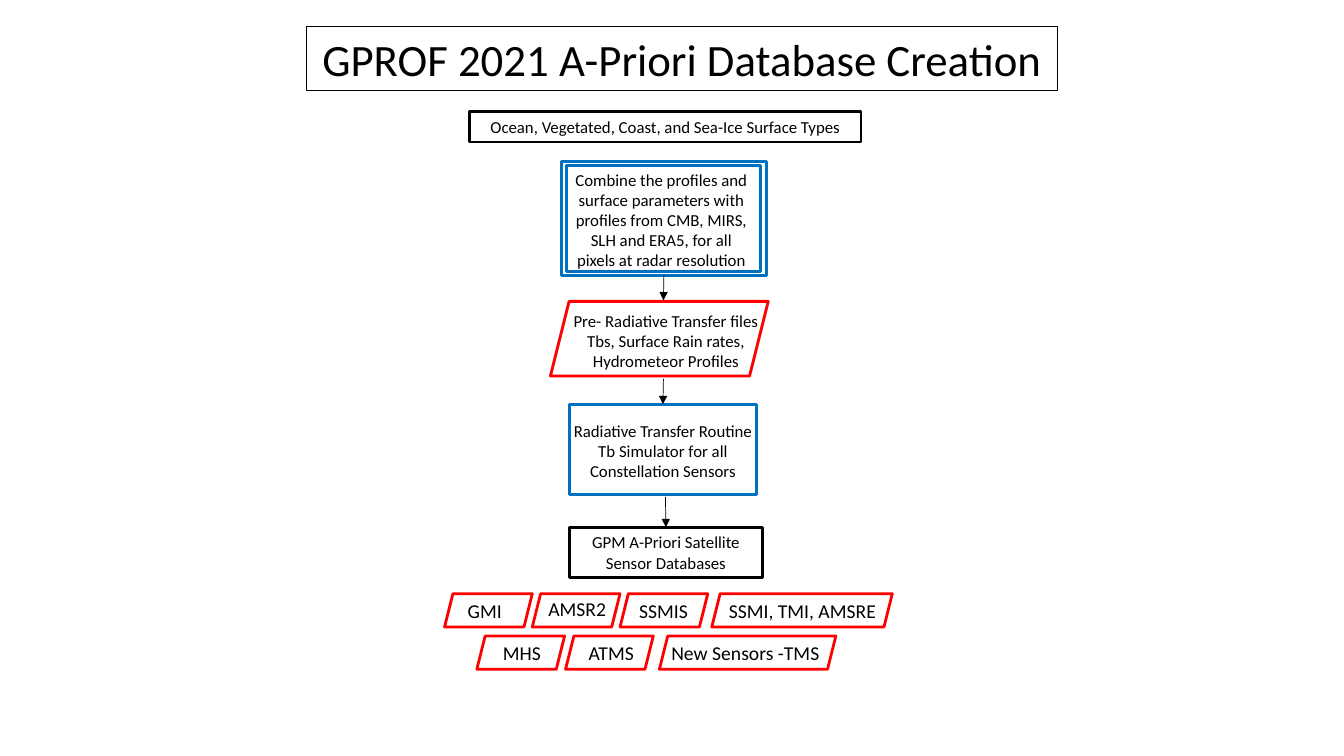
import dataclasses

import pptx
import pptx.dml.color
import pptx.enum.shapes
import pptx.enum.text
import pptx.oxml
import pptx.oxml.ns
import pptx.util
from pptx.util import Inches

SHAPE = pptx.enum.shapes.MSO_SHAPE
ALIGN = pptx.enum.text.PP_ALIGN


@dataclasses.dataclass(frozen=True)
class Theme:
    font: str = "Calibri"
    ink: str = "000000"
    process: str = "0070C0"
    data: str = "FF0000"
    title: float = 32
    body: float = 12
    sensor: float = 14
    hairline: float = 0.75
    border: float = 2
    arrow: float = 0.5


THEME = Theme()


def rgb(value):
    return pptx.dml.color.RGBColor.from_string(value)


def write(sp, text, size, align=ALIGN.CENTER, wrap=True):
    tf = sp.text_frame
    tf.text = text
    tf.word_wrap = wrap
    for p in tf.paragraphs:
        p.alignment = align
        for r in p.runs:
            r.font.name = THEME.font
            r.font.size = pptx.util.Pt(size)
            r.font.color.rgb = rgb(THEME.ink)


def outline(s, kind, x, y, w, h, color, width=THEME.border):
    sp = s.shapes.add_shape(kind, Inches(x), Inches(y), Inches(w), Inches(h))
    sp.shadow.inherit = False
    sp.fill.background()
    sp.line.color.rgb = rgb(color)
    sp.line.width = pptx.util.Pt(width)
    return sp


def label(s, x, y, w, h, text, size, align=ALIGN.CENTER, wrap=True):
    sp = s.shapes.add_textbox(Inches(x), Inches(y), Inches(w), Inches(h))
    write(sp, text, size, align, wrap)


def arrow(s, x, top, bottom, source=None, target=None):
    line = s.shapes.add_connector(
        pptx.enum.shapes.MSO_CONNECTOR.STRAIGHT,
        Inches(x), Inches(top), Inches(x), Inches(bottom))
    if source is not None:
        line.begin_connect(source, 2)
    if target is not None:
        line.end_connect(target, 0)
    line.line.color.rgb = rgb(THEME.ink)
    line.line.width = pptx.util.Pt(THEME.arrow)
    pptx.oxml.ns.qn("a:tailEnd")
    ln = line.line._get_or_add_ln()
    tail = ln.makeelement(pptx.oxml.ns.qn("a:tailEnd"), {"type": "triangle"})
    ln.append(tail)
    sppr = line._element.spPr
    sppr.append(sppr.makeelement(pptx.oxml.ns.qn("a:effectLst"), {}))


def draw_heading(s, x, y, w, h):
    title = outline(s, SHAPE.RECTANGLE, x, y, w, h, THEME.ink, THEME.hairline)
    write(title, "GPROF 2021 A-Priori Database Creation", THEME.title)
    surfaces = outline(s, SHAPE.RECTANGLE, x + 1.62, y + 0.85, 3.88, 0.3, THEME.ink)
    write(surfaces, "Ocean, Vegetated, Coast, and Sea-Ice Surface Types", THEME.body)


def draw_flow(s, x, y):
    combine = outline(s, SHAPE.RECTANGLE, x + 0.11, y, 2.03, 1.13, THEME.process)
    outline(s, SHAPE.RECTANGLE, x + 0.16, y + 0.04, 1.92, 1.05, THEME.process)
    label(s, x + 0.12, y + 0.03, 1.96, 1.11,
          "Combine the profiles and surface parameters with profiles from "
          "CMB, MIRS, SLH and ERA5, for all pixels at radar resolution", THEME.body)

    outline(s, SHAPE.PARALLELOGRAM, x, y + 1.39, 2.16, 0.74, THEME.data)
    label(s, x + 0.08, y + 1.43, 2.13, 0.71,
          "Pre- Radiative Transfer files\nTbs, Surface Rain rates,\nHydrometeor Profiles",
          THEME.body, wrap=False)

    routine = outline(s, SHAPE.RECTANGLE, x + 0.19, y + 2.41, 1.85, 0.9, THEME.process)
    label(s, x + 0.02, y + 2.52, 2.19, 0.71,
          "Radiative Transfer Routine\nTb Simulator for all Constellation Sensors",
          THEME.body)

    database = outline(s, SHAPE.RECTANGLE, x + 0.19, y + 3.63, 1.91, 0.5, THEME.ink)
    write(database, "GPM A-Priori Satellite Sensor Databases", THEME.body)

    arrow(s, x + 1.12, y + 1.13, y + 1.38, source=combine)
    arrow(s, x + 1.12, y + 2.16, y + 2.41, target=routine)
    arrow(s, x + 1.14, y + 3.33, y + 3.63, target=database)


def draw_sensors(s, x, y):
    rows = [
        [("GMI", 0, 0.87, 0.13, 0), ("AMSR2", 0.87, 0.87, 0.06, -0.02),
         ("SSMIS", 1.74, 0.87, 0.09, 0), ("SSMI, TMI, AMSRE", 2.65, 1.79, 0.07, 0)],
        [("MHS", 0.32, 0.87, 0.16, 0), ("ATMS", 1.2, 0.87, 0.13, 0),
         ("New Sensors -TMS", 2.13, 1.75, 0.02, 0)],
    ]
    for i, row in enumerate(rows):
        top = y + 0.42 * i
        for name, left, width, dx, dy in row:
            outline(s, SHAPE.PARALLELOGRAM, x + left, top, width, 0.33, THEME.data)
            label(s, x + left + dx, top + dy, width, 0.34, name,
                  THEME.sensor, ALIGN.LEFT, width > 1)


def main():
    prs = pptx.Presentation()
    prs.slide_width = Inches(13.33)
    prs.slide_height = Inches(7.5)
    s = prs.slides.add_slide(prs.slide_layouts[6])
    draw_heading(s, 3.04, 0.26, 7.45, 0.64)
    draw_flow(s, 5.46, 1.6)
    draw_sensors(s, 4.41, 5.89)
    prs.save("out.pptx")


if __name__ == "__main__":
    main()
